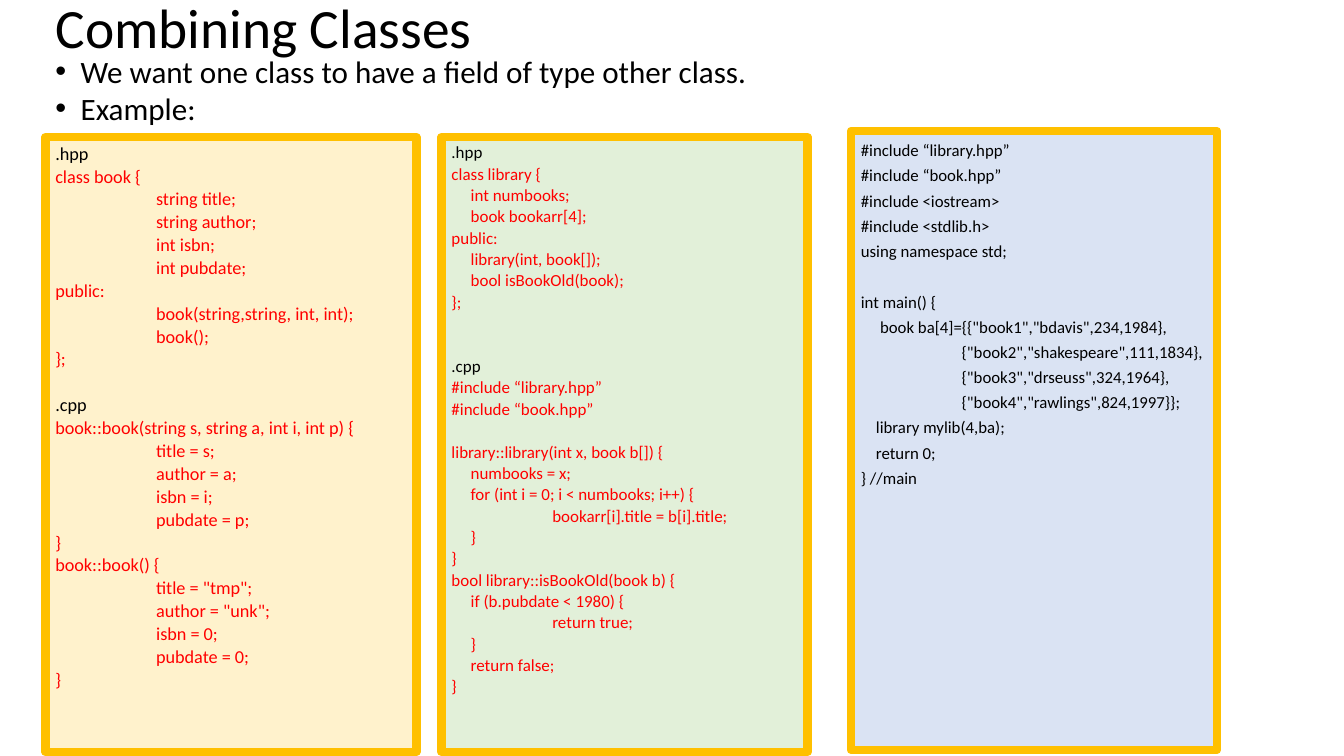
from pptx import Presentation
from pptx.dml.color import RGBColor
from pptx.enum.shapes import MSO_SHAPE
from pptx.enum.text import MSO_ANCHOR, MSO_AUTO_SIZE, PP_ALIGN
from pptx.oxml.ns import qn
from pptx.util import Inches, Pt

RECTANGLE = MSO_SHAPE.RECTANGLE
TOP, MIDDLE = MSO_ANCHOR.TOP, MSO_ANCHOR.MIDDLE
LEFT = PP_ALIGN.LEFT
NO_AUTOFIT = MSO_AUTO_SIZE.NONE

FONT = "Calibri"
BLACK = RGBColor(0x00, 0x00, 0x00)
RED = RGBColor(0xFF, 0x00, 0x00)
GOLD = RGBColor(0xFF, 0xC0, 0x00)
CREAM = RGBColor(0xFF, 0xF2, 0xCC)
PALE_GREEN = RGBColor(0xE2, 0xF0, 0xD9)
PALE_BLUE = RGBColor(0xDA, 0xE3, 0xF3)

FILE_LABELS = (".hpp", ".cpp")
LINE_HEIGHT = 1.22  # height of a single line relative to the font size
SPACE_WIDTH = 0.226  # width of a space relative to the font size
CODE_GAP = 0.7  # points before each line of code

BOOK_CODE = """.hpp
class book {
\tstring title;
\tstring author;
\tint isbn;
\tint pubdate;
public:
\tbook(string,string, int, int);
\tbook();
};

.cpp
book::book(string s, string a, int i, int p) {
\ttitle = s;
\tauthor = a;
\tisbn = i;
\tpubdate = p;
}
book::book() {
\ttitle = "tmp";
\tauthor = "unk";
\tisbn = 0;
\tpubdate = 0;
}"""

LIBRARY_CODE = """.hpp
class library {
     int numbooks;
     book bookarr[4];
public:
     library(int, book[]);
     bool isBookOld(book);
};


.cpp
#include “library.hpp”
#include “book.hpp”

library::library(int x, book b[]) {
     numbooks = x;
     for (int i = 0; i < numbooks; i++) {
\tbookarr[i].title = b[i].title;
     }
}
bool library::isBookOld(book b) {
     if (b.pubdate < 1980) {
\treturn true;
     }
     return false;
}"""

MAIN_CODE = """#include “library.hpp”
#include “book.hpp”
#include <iostream>
#include <stdlib.h>
using namespace std;

int main() {
     book ba[4]={{"book1","bdavis",234,1984},
\t{"book2","shakespeare",111,1834},
\t{"book3","drseuss",324,1964},
\t{"book4","rawlings",824,1997}};
    library mylib(4,ba);
    return 0;
} //main"""


def place(shape, box):
    shape.left, shape.top, shape.width, shape.height = (Inches(n) for n in box)


def prepare_frame(shape, anchor):
    frame = shape.text_frame
    frame.word_wrap = True
    frame.auto_size = NO_AUTOFIT
    frame.vertical_anchor = anchor
    return frame


def add_run(paragraph, text, size, color):
    run = paragraph.add_run()
    run.text = text
    run.font.name = FONT
    run.font.size = Pt(size)
    run.font.color.rgb = color


def set_indent(paragraph, margin, first_line=0):
    properties = paragraph._p.get_or_add_pPr()
    properties.set("marL", str(Inches(margin)))
    properties.set("indent", str(Inches(first_line)))
    return properties


def next_paragraph(frame, index):
    return frame.add_paragraph() if index else frame.paragraphs[0]


def fill_title(title, box, text):
    place(title, box)
    paragraph = prepare_frame(title, MIDDLE).paragraphs[0]
    paragraph.alignment = LEFT
    paragraph.line_spacing = 0.9
    add_run(paragraph, text, 39.6, BLACK)


def fill_bullets(body, box, items):
    place(body, box)
    frame = prepare_frame(body, TOP)
    for index, item in enumerate(items):
        paragraph = next_paragraph(frame, index)
        paragraph.line_spacing = 0.8
        paragraph.space_before = Pt(5)
        properties = set_indent(paragraph, 0.25, -0.25)
        bullet_font = properties.makeelement(qn("a:buFont"), {"typeface": "Arial"})
        bullet = properties.makeelement(qn("a:buChar"), {"char": "•"})
        properties.extend([bullet_font, bullet])
        add_run(paragraph, item, 22.2, BLACK)


def add_code_panel(slide, box, fill, code, size, color, spacing=1.0):
    """Draw a framed panel; leading tabs and spaces become indents, empty lines become gaps."""
    panel = slide.shapes.add_shape(RECTANGLE, *(Inches(n) for n in box))
    panel.shadow.inherit = False
    panel.fill.solid()
    panel.fill.fore_color.rgb = fill
    panel.line.color.rgb = GOLD
    panel.line.width = Pt(6)

    frame = prepare_frame(panel, TOP)
    pitch = size * LINE_HEIGHT * spacing + CODE_GAP
    empty_lines = 0
    for index, line in enumerate(code.split("\n")):
        text = line.lstrip()
        if not text:
            empty_lines += 1
            continue
        paragraph = next_paragraph(frame, index)
        paragraph.alignment = LEFT
        paragraph.line_spacing = spacing
        paragraph.space_before = Pt(round(CODE_GAP + empty_lines * pitch, 2))
        spaces = len(line) - len(text)
        indent = 1 if line.startswith("\t") else spaces * SPACE_WIDTH * size / 72
        set_indent(paragraph, round(indent, 2))
        add_run(paragraph, text, size, BLACK if text in FILE_LABELS else color)
        empty_lines = 0


def build_slide(presentation):
    slide = presentation.slides.add_slide(presentation.slide_layouts[1])

    # Heading and bullets
    fill_title(slide.shapes.title, (0.45, 0, 11.5, 0.61), "Combining Classes")
    fill_bullets(slide.placeholders[1], (0.45, 0.54, 11.5, 0.76),
                 ["We want one class to have a field of type other class.", "Example:"])

    # Code panels
    add_code_panel(slide, (0.45, 1.36, 3.68, 6.1), CREAM, BOOK_CODE, 13, RED)
    add_code_panel(slide, (4.38, 1.36, 3.63, 6.1), PALE_GREEN, LIBRARY_CODE, 12.1, RED)
    add_code_panel(slide, (8.44, 1.3, 3.63, 6.14), PALE_BLUE, MAIN_CODE, 12, BLACK, 1.2)


def main():
    presentation = Presentation()
    presentation.slide_width = Inches(13.33)
    presentation.slide_height = Inches(7.5)
    build_slide(presentation)
    presentation.save("out.pptx")


if __name__ == "__main__":
    main()
